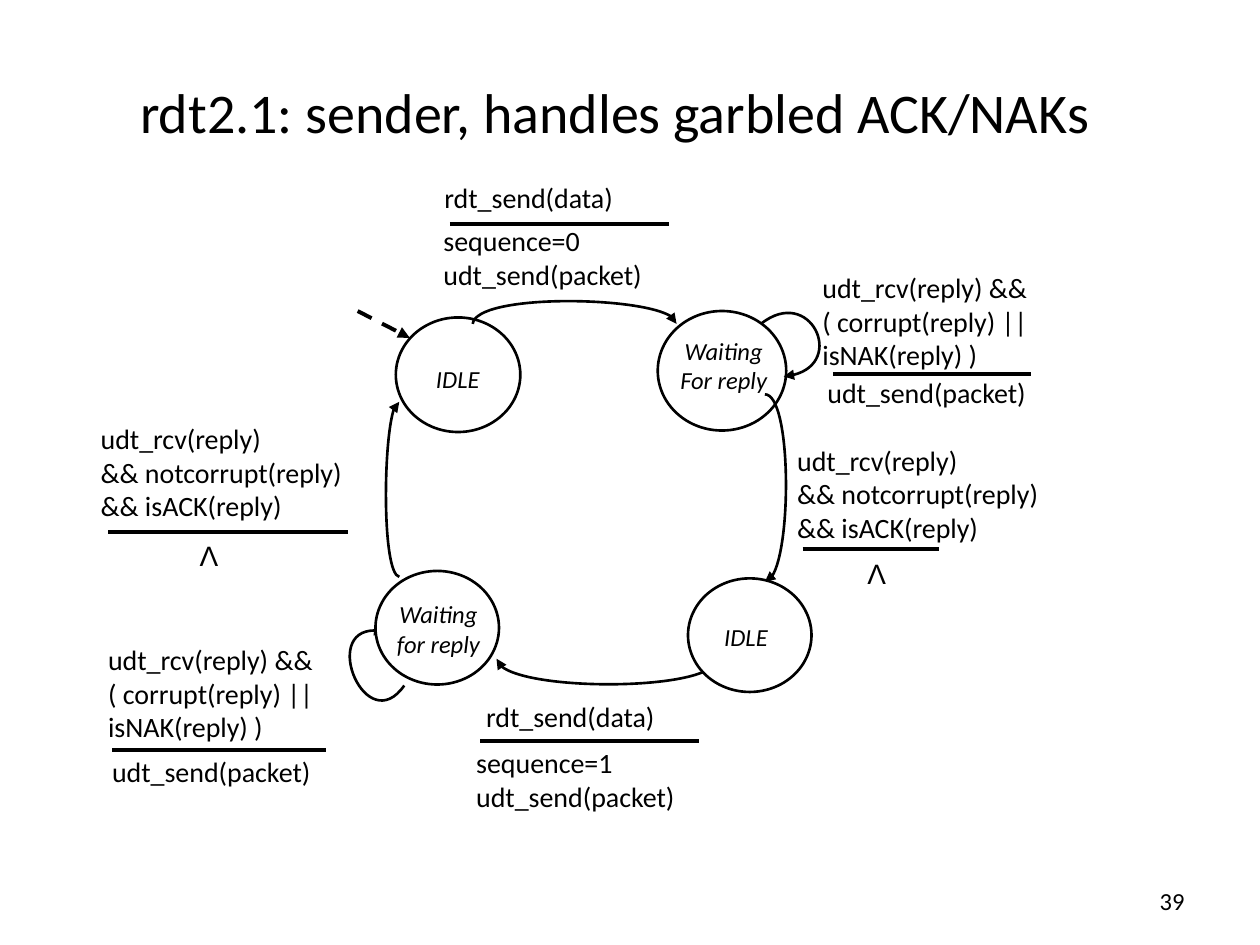
"""Build a slide with the state diagram of the rdt2.1 sender."""
from lxml.etree import SubElement
from pptx import Presentation
from pptx.dml.color import RGBColor
from pptx.enum.dml import MSO_LINE_DASH_STYLE as Dash
from pptx.enum.shapes import MSO_CONNECTOR as Connector, MSO_SHAPE as Shape
from pptx.enum.text import MSO_ANCHOR as Anchor, PP_ALIGN as Align
from pptx.oxml.ns import qn
from pptx.util import Cm, Pt

COLORS = {"ink": "000000", "paper": "FFFFFF"}
RETRY = ["udt_rcv(reply) &&", "( corrupt(reply) ||", "isNAK(reply) )"]
ACKED = ["udt_rcv(reply)", "&& notcorrupt(reply)", "&& isACK(reply)"]
SEND = ["rdt_send(data)"]
RESEND = ["udt_send(packet)"]
NOTHING = ["Λ"]

TITLE = (["rdt2.1: sender, handles garbled ACK/NAKs"], (0.91, 0.66, 22.99, 3.18))
PAGE = (["39"], (18.21, 17.65, 5.92, 1.02))

# Each state: label lines, circle box, label box
TOP_STATES = [
    (["IDLE"], (7.98, 6.4, 2.51, 2.31), (7.72, 7.21, 3.02, 1.7)),
    (["Waiting", "For reply"], (13.26, 6.27, 2.59, 2.41), (13.08, 6.65, 3.02, 1.8)),
]
BOTTOM_STATES = [
    (["IDLE"], (13.87, 11.66, 2.49, 2.29), (13.49, 12.42, 3.1, 1.7)),
    (["Waiting", "for reply"], (7.57, 11.51, 2.49, 2.29), (7.39, 11.96, 2.9, 1.7)),
]
START = ((7.21, 6.27), (8.26, 6.81))

TRANSITIONS = [
    {"event": (SEND, (8.71, 3.51, 5.87, 0.84)), "bar": (9.07, 13.49, 4.52),
     "action": (["sequence=0"] + RESEND, (8.69, 4.39, 10.26, 1.12)),
     "curve": [(9.53, 6.53), (9.6, 5.92), (13.64, 5.97), (13.64, 6.53)]},
    {"event": (RETRY, (16.33, 5.33, 7.11, 1.57)), "bar": (16.79, 20.78, 7.54),
     "action": (RESEND, (16.43, 7.44, 6.27, 1.12)),
     "curve": [(15.34, 6.53), (16.33, 5.74), (17.15, 7.47), (15.8, 7.59)]},
    {"event": (ACKED, (15.82, 8.81, 8.33, 1.57)), "bar": (16.18, 18.92, 11.07),
     "action": (NOTHING, (17.22, 11.1, 0.91, 0.94)),
     "curve": [(15.42, 7.95), (15.95, 7.95), (15.98, 11.66), (15.42, 11.73)]},
    {"event": (SEND, (9.55, 13.97, 6.63, 0.79)), "bar": (9.68, 14.1, 14.94),
     "action": (["sequence=1"] + RESEND, (9.35, 14.91, 10.46, 1.12)),
     "curve": [(14.45, 13.28), (14.45, 13.92), (10.08, 13.97), (10.01, 13.28)]},
    {"event": (RETRY, (1.93, 12.83, 5.59, 1.57)), "bar": (2.26, 6.58, 15.11),
     "action": (RESEND, (2.01, 15.09, 5.38, 0.76)),
     "curve": [(8.15, 13.82), (7.39, 14.91), (6.35, 12.47), (7.75, 12.73)]},
    {"event": (ACKED, (1.78, 8.38, 5.87, 1.57)), "bar": (2.18, 7.01, 10.72),
     "action": (NOTHING, (3.76, 10.74, 0.91, 0.94)),
     "curve": [(8.05, 11.63), (7.7, 11.56), (7.72, 8.1), (8.05, 8.1)]},
]


def color(name):
    return RGBColor.from_string(COLORS[name])


def lengths(values):
    return [Cm(value) for value in values]


def add_text(slide, lines, box, size=16, align=Align.LEFT, anchor=Anchor.TOP,
             italic=False, font="Calibri", wrap=True):
    frame = slide.shapes.add_textbox(*lengths(box)).text_frame
    frame.word_wrap = wrap
    frame.vertical_anchor = anchor
    for index, line in enumerate(lines):
        paragraph = frame.add_paragraph() if index else frame.paragraphs[0]
        paragraph.alignment = align
        run = paragraph.add_run()
        run.text = line
        run.font.name = font
        run.font.size = Pt(size)
        run.font.italic = italic
        run.font.color.rgb = color("ink")


def set_line(shape, width):
    shape.line.color.rgb = color("ink")
    shape.line.width = Pt(width)


def add_arrowhead(shape):
    outline = shape._element.spPr.find(qn("a:ln"))
    SubElement(outline, qn("a:tailEnd"), type="triangle")


def add_line(slide, start, end):
    line = slide.shapes.add_connector(Connector.STRAIGHT, *lengths(start + end))
    set_line(line, 2.25)
    SubElement(line._element.spPr, qn("a:effectLst"))
    return line


def add_curve(slide, points):
    start, *rest = [lengths(point) for point in points]
    builder = slide.shapes.build_freeform(*start)
    builder.add_line_segments(rest, close=False)
    curve = builder.convert_to_shape()
    curve.shadow.inherit = False
    curve.fill.background()
    set_line(curve, 1.5)
    add_arrowhead(curve)
    outline = next(curve._element.iter(qn("a:path")))
    segments = outline.findall(qn("a:lnTo"))
    bezier = SubElement(outline, qn("a:cubicBezTo"))
    for segment in segments:
        bezier.append(segment[0])
        outline.remove(segment)


def add_state(slide, lines, circle_box, label_box):
    circle = slide.shapes.add_shape(Shape.OVAL, *lengths(circle_box))
    circle.shadow.inherit = False
    circle.fill.solid()
    circle.fill.fore_color.rgb = color("paper")
    set_line(circle, 1.5)
    add_text(slide, lines, label_box, 14, Align.CENTER, italic=True)


def add_transition_label(slide, transition):
    add_text(slide, *transition["event"])
    left, right, level = transition["bar"]
    add_line(slide, (left, level), (right, level))
    lines, box = transition["action"]
    if lines is NOTHING:
        add_text(slide, lines, box, align=Align.CENTER, font="Arial", wrap=False)
    else:
        add_text(slide, lines, box)


def main():
    deck = Presentation()
    deck.slide_width, deck.slide_height = Cm(25.4), Cm(19.05)
    slide = deck.slides.add_slide(deck.slide_layouts[6])
    add_text(slide, *PAGE, 14, Align.RIGHT, Anchor.MIDDLE)
    add_text(slide, *TITLE, 32, Align.CENTER, Anchor.MIDDLE)
    for state in TOP_STATES:
        add_state(slide, *state)
    start_arrow = add_line(slide, *START)
    start_arrow.line.dash_style = Dash.DASH
    add_arrowhead(start_arrow)
    for transition in TRANSITIONS:
        add_curve(slide, transition["curve"])
    for state in BOTTOM_STATES:
        add_state(slide, *state)
    for transition in TRANSITIONS:
        add_transition_label(slide, transition)
    deck.save("out.pptx")


if __name__ == "__main__":
    main()
